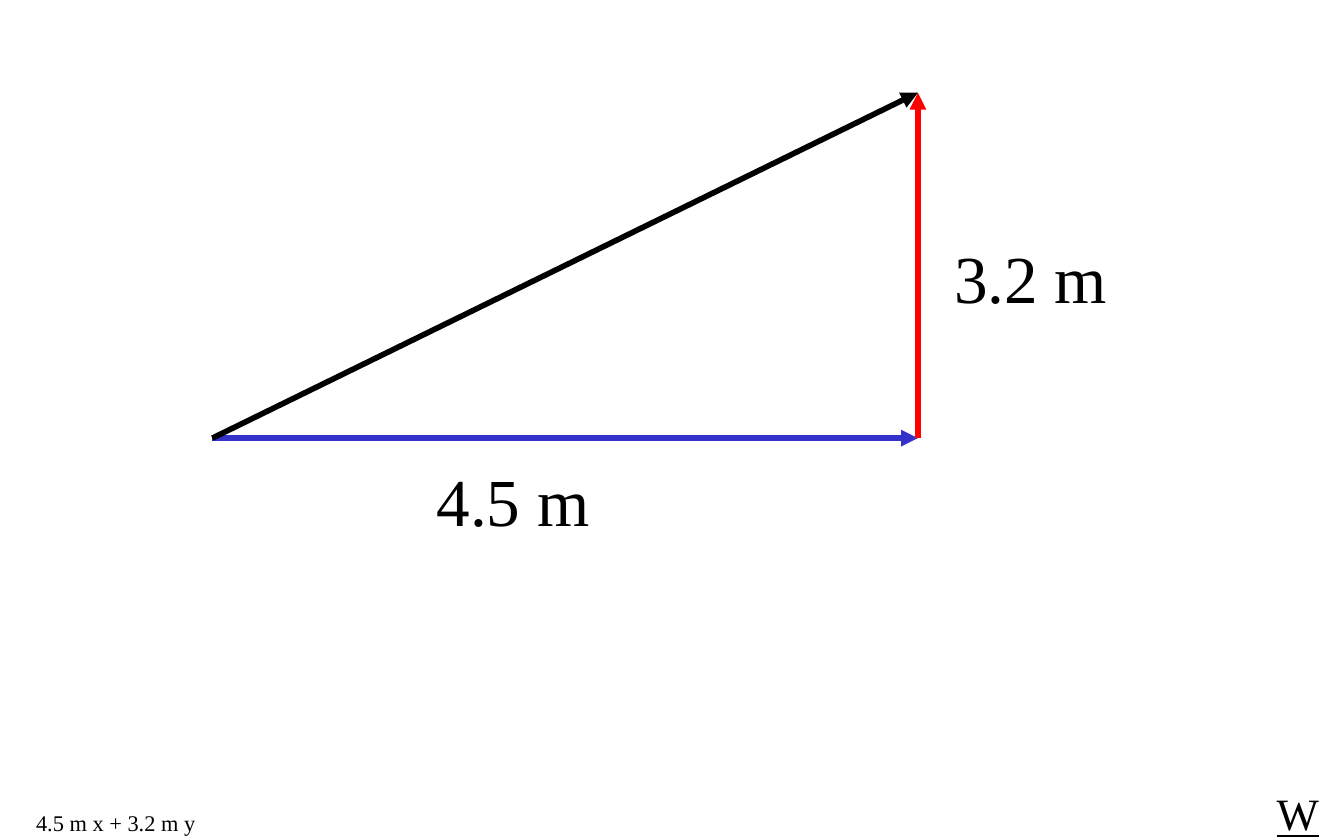
from dataclasses import dataclass

from lxml import etree
from pptx import Presentation
from pptx.dml.color import RGBColor
from pptx.enum.shapes import MSO_CONNECTOR
from pptx.enum.text import MSO_AUTO_SIZE
from pptx.oxml.ns import qn
from pptx.util import Inches, Pt

STRAIGHT = MSO_CONNECTOR.STRAIGHT
GROW = MSO_AUTO_SIZE.SHAPE_TO_FIT_TEXT


@dataclass(frozen=True)
class Theme:
    font: str = "Times New Roman"
    ink: str = "000000"
    blue: str = "3333CC"
    red: str = "FF0000"
    small: int = 12
    mid: int = 24
    large: int = 36
    line: int = 3


class Board:
    """Places elements on a grid of 100 columns by 62.5 rows."""

    def __init__(self, slide, theme, unit):
        self.slide, self.theme, self.unit = slide, theme, unit

    def span(self, *cells):
        return [round(cell * self.unit) for cell in cells]

    def label(self, text, box, size, under=None):
        shape = self.slide.shapes.add_textbox(*self.span(*box))
        frame = shape.text_frame
        frame.word_wrap = False
        frame.auto_size = GROW
        para = frame.paragraphs[0]
        para.text = text
        font = para.font
        font.name, font.size, font.underline = self.theme.font, Pt(size), under
        font.color.rgb = RGBColor.from_string(self.theme.ink)

    def arrow(self, start, end, color):
        link = self.slide.shapes.add_connector(STRAIGHT, *self.span(*start, *end))
        link.line.color.rgb = RGBColor.from_string(color)
        link.line.width = Pt(self.theme.line)
        # Arrowhead at the end, and no shadow
        etree.SubElement(link.line._get_or_add_ln(), qn("a:tailEnd"), type="triangle")
        etree.SubElement(link._element.spPr, qn("a:effectLst"))


def main():
    deck = Presentation()
    deck.slide_width, deck.slide_height = Inches(10), Inches(6.25)
    theme = Theme()
    slide = deck.slides.add_slide(deck.slide_layouts[6])
    board = Board(slide, theme, deck.slide_width / 100)

    # Footer: the sum in components and the corner mark
    board.label("4.5 m x + 3.2 m y", (1.7, 59.7, 14.1, 3), theme.small)
    board.label("W", (94, 58, 5.2, 5), theme.mid, under=True)

    # Vector triangle: two components and their sum
    tail, turn, tip = (15.8, 32.6), (68.3, 32.6), (68.3, 6.9)
    board.arrow(tail, turn, theme.blue)
    board.arrow(turn, tip, theme.red)
    board.arrow(tail, tip, theme.ink)

    # Lengths of the components
    board.label("4.5 m", (31.5, 33.7, 13.5, 7.1), theme.large)
    board.label("3.2 m", (70, 17.1, 13.5, 7.1), theme.large)

    deck.save("out.pptx")


if __name__ == "__main__":
    main()
